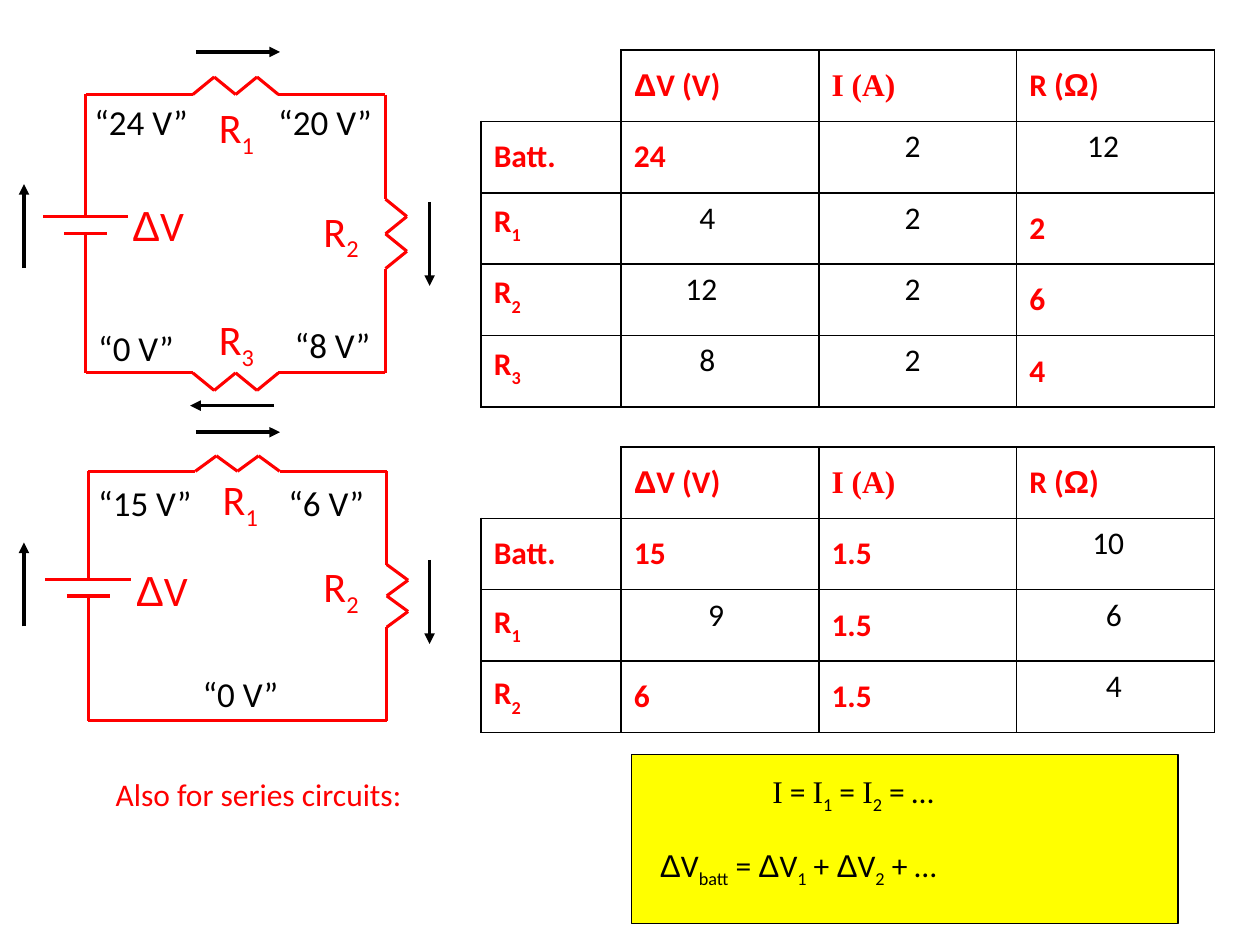
from lxml.etree import SubElement
from pptx import Presentation
from pptx.dml.color import RGBColor
from pptx.enum.shapes import MSO_CONNECTOR, MSO_SHAPE
from pptx.enum.text import MSO_ANCHOR
from pptx.oxml.ns import qn
from pptx.util import Pt

RED, BLACK, YELLOW = "FF0000", "000000", "FFFF00"
SANS, GREEK, SERIF = "Calibri", "Arial", "Times New Roman"


def colour(value):
    return RGBColor.from_string(value)


# A span is (text, font, baseline percent)
def plain(text, font=SANS):
    return [(text, font, 0)]


def indexed(letter, index, font=SANS, drop=-25):
    return [(letter, font, 0), (index, SANS, drop)]


def delta(text):
    return plain("Δ", GREEK) + plain(text)


def delta_v(index):
    return plain("Δ", GREEK) + indexed("V", index)


class SlideBuilder:
    line_width = 1.75

    def __init__(self, page):
        self.page = page

    def add_spans(self, frame, spans, size, ink, bold=False):
        para = frame.paragraphs[0]
        for text, font, baseline in spans:
            span = para.add_run()
            span.text = text
            span.font.name = font
            span.font.size = Pt(size)
            span.font.bold = bold
            span.font.color.rgb = colour(ink)
            if baseline:
                span._r.get_or_add_rPr().set("baseline", str(baseline * 1000))

    def text(self, left, top, width, height, spans, size, ink=BLACK,
             anchor=MSO_ANCHOR.TOP):
        box = self.page.shapes.add_textbox(Pt(left), Pt(top), Pt(width), Pt(height))
        box.text_frame.word_wrap = True
        box.text_frame.vertical_anchor = anchor
        self.add_spans(box.text_frame, spans, size, ink)

    def panel(self, left, top, width, height, fill):
        box = self.page.shapes.add_shape(
            MSO_SHAPE.RECTANGLE, Pt(left), Pt(top), Pt(width), Pt(height))
        box.shadow.inherit = False
        box.fill.solid()
        box.fill.fore_color.rgb = colour(fill)
        box.line.color.rgb = colour(BLACK)
        box.line.width = Pt(0.75)

    def line(self, start, end, ink=RED, width=line_width):
        link = self.page.shapes.add_connector(
            MSO_CONNECTOR.STRAIGHT, *(Pt(value) for value in (*start, *end)))
        link.line.color.rgb = colour(ink)
        link.line.width = Pt(width)
        SubElement(link._element.spPr, qn("a:effectLst"))
        return link

    def arrow(self, start, end):
        link = self.line(start, end, BLACK, 2)
        outline = link._element.spPr.find(qn("a:ln"))
        SubElement(outline, qn("a:tailEnd"), type="triangle")

    def circuit(self, left, right, top, bottom, battery, across, down, peak,
                bottom_resistor=False):
        """Draw the loop clockwise from the battery's upper plate to its lower."""
        def steps(start, end):
            return [start + (end - start) * i / 4 for i in range(5)]

        upper, lower = battery
        points = [(left, upper), (left, top)]
        points += [(x, top - peak * (i % 2)) for i, x in enumerate(steps(*across))]
        points.append((right, top))
        points += [(right + 12.2 * (i % 2), y) for i, y in enumerate(steps(*down))]
        points.append((right, bottom))
        if bottom_resistor:
            points += [(x, bottom + peak * (i % 2))
                       for i, x in enumerate(steps(*reversed(across)))]
        points += [(left, bottom), (left, lower)]
        for start, end in zip(points, points[1:]):
            self.line(start, end)
        for y, half in ((upper, 24.4), (lower, 12.2)):
            self.line((left - half, y), (left + half, y))

    def border(self, cell, visible):
        properties = cell._tc.get_or_add_tcPr()
        for side, shown in zip(("lnL", "lnR", "lnT", "lnB"), visible):
            edge = SubElement(properties, qn(f"a:{side}"), w=str(Pt(1)))
            if shown:
                fill = SubElement(edge, qn("a:solidFill"))
                SubElement(fill, qn("a:srgbClr"), val=BLACK)
            else:
                SubElement(edge, qn("a:noFill"))

    def table(self, left, top, rows, label_lift=0):
        """Fill a grid; given cells are span lists, answers are (text, indent)."""
        widths, row_height = (80, 113, 113, 113), 40.8
        table = self.page.shapes.add_table(
            len(rows), len(widths), Pt(left), Pt(top),
            Pt(sum(widths)), Pt(row_height * len(rows))).table
        table.first_row = table.horz_banding = False
        for column, width in zip(table.columns, widths):
            column.width = Pt(width)
        for r, row in enumerate(rows):
            table.rows[r].height = Pt(row_height)
            for c, content in enumerate(row):
                cell = table.cell(r, c)
                corner = r == c == 0
                self.border(cell, (not corner, True, not corner, True))
                cell.fill.background()
                cell.margin_left = Pt(7.2)
                cell.vertical_anchor = MSO_ANCHOR.MIDDLE
                if isinstance(content, tuple):
                    answer, indent = content
                    cell.margin_left = Pt(indent)
                    cell.vertical_anchor = MSO_ANCHOR.TOP
                    self.add_spans(cell.text_frame, plain(answer), 18, BLACK)
                else:
                    if c == 0 and len(content) > 1:
                        cell.margin_bottom = Pt(3.6 + label_lift)
                    self.add_spans(cell.text_frame, content, 18, RED, bold=True)


deck = Presentation()
deck.slide_width, deck.slide_height = Pt(720), Pt(540)
slide = SlideBuilder(deck.slides.add_slide(deck.slide_layouts[6]))

# Formula panel
slide.panel(360.7, 431.3, 312.5, 96.5, YELLOW)
slide.text(59, 433.4, 302, 41, plain("Also for series circuits:"), 18, RED,
           MSO_ANCHOR.MIDDLE)
slide.text(434.2, 437.8, 187, 41,
           plain("I", SERIF) + plain(" = ") + indexed("I", "1", SERIF)
           + plain(" = ") + indexed("I", "2", SERIF) + plain(" = …"), 18)
slide.text(370, 480.2, 298, 41,
           delta_v("batt") + plain(" = ") + delta_v("1") + plain(" + ")
           + delta_v("2") + plain(" + …"), 18)

# Tables of voltage, current and resistance
header = [[], delta("V (V)"), plain("I (A)", SERIF),
          plain("R (") + plain("Ω", GREEK) + plain(")")]
battery_label = plain("Batt.")
r1, r2, r3 = (indexed("R", index, drop=-30) for index in "123")
current = ("2", 49)
slide.table(275, 28.6, [
    header,
    [battery_label, plain("24"), current, ("12", 40.3)],
    [r1, ("4", 44.6), current, plain("2")],
    [r2, ("12", 36.7), current, plain("6")],
    [r3, ("8", 44.6), current, plain("4")],
], label_lift=4.6)
slide.table(275, 255.4, [
    header,
    [battery_label, plain("15"), plain("1.5"), ("10", 43.2)],
    [r1, ("9", 49.7), plain("1.5"), ("6", 51)],
    [r2, plain("6"), plain("1.5"), ("4", 51)],
])

# Circuits
slide.circuit(49, 220.3, 54, 213.1, (123.8, 133.4), (110.2, 159.1),
              (113.8, 153.5), 10, bottom_resistor=True)
slide.circuit(50.4, 221, 269.3, 411.8, (331.2, 340.6), (111.6, 159.8),
              (322.6, 358.4), 8.8)

# Component labels
for left, top, spans in (
        (118, 54.7, indexed("R", "1")), (177.8, 113.8, indexed("R", "2")),
        (118, 175.7, indexed("R", "3")), (68.4, 110.2, delta("V")),
        (120.2, 267.1, indexed("R", "1")), (177.8, 316.8, indexed("R", "2")),
        (70.6, 319, delta("V"))):
    slide.text(left, top, 61, 39, spans, 24, RED)

# Potentials around each loop
for left, top, width, volts in (
        (46.8, 54, 69, "24"), (151.9, 54, 69, "20"),
        (49, 182.9, 58, "0"), (161.3, 181.4, 58, "8"),
        (49, 271.4, 69, "15"), (157.7, 271.4, 58, "6"), (108.7, 380.9, 58, "0")):
    slide.text(left, top, width, 31, plain(f"“{volts} V”"), 20)

# Current arrows
for start, end in (
        ((112, 29.7), (160, 29.7)), ((156.7, 231.8), (108.7, 231.8)),
        ((245.5, 115.4), (245.5, 163.4)), ((13.7, 153.2), (13.7, 105.2)),
        ((112, 247), (160, 247)), ((245.5, 320), (245.5, 368)),
        ((13.7, 358), (13.7, 310))):
    slide.arrow(start, end)

deck.save("out.pptx")
